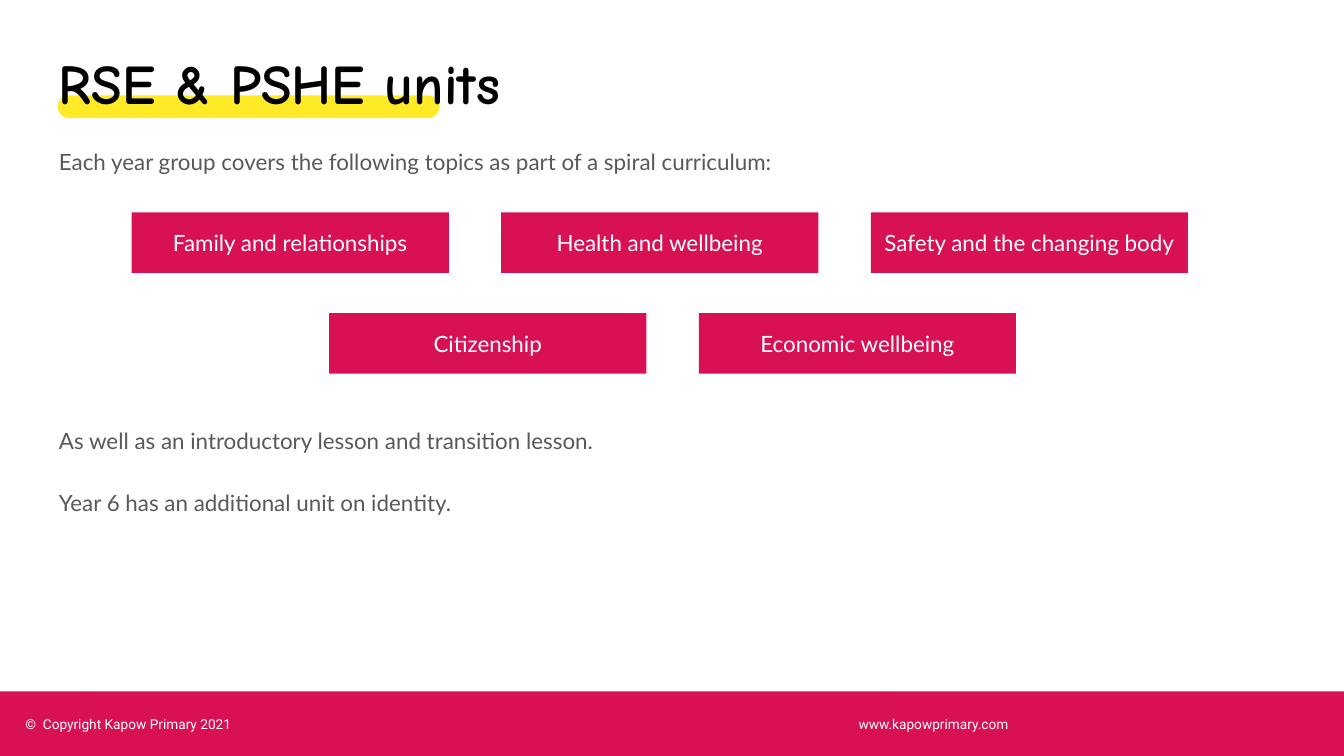
from lxml.etree import SubElement
from pptx import Presentation
from pptx.dml.color import RGBColor
from pptx.enum.shapes import MSO_SHAPE
from pptx.enum.text import MSO_ANCHOR, PP_ALIGN
from pptx.oxml.ns import qn
from pptx.util import Inches, Pt

PINK = RGBColor(0xD8, 0x11, 0x55)
YELLOW = RGBColor(0xFF, 0xEA, 0x28)
WHITE = RGBColor(0xFF, 0xFF, 0xFF)
BLACK = RGBColor(0x00, 0x00, 0x00)
GREY = RGBColor(0x59, 0x59, 0x59)

WIDTH = 10
HEIGHT = WIDTH * 9 / 16
FOOTER_HEIGHT = 0.48
TOPIC_ROWS = [
    (0.98, ["Family and relationships", "Health and wellbeing", "Safety and the changing body"]),
    (2.45, ["Citizenship", "Economic wellbeing"]),
]


def add_block(s, kind, x, y, w, h, color):
    sp = s.shapes.add_shape(kind, Inches(x), Inches(y), Inches(w), Inches(h))
    sp.shadow.inherit = False
    sp.fill.solid()
    sp.fill.fore_color.rgb = color
    sp.line.fill.background()
    return sp


def set_frame(sp, anchor=MSO_ANCHOR.TOP):
    tf = sp.text_frame
    tf.word_wrap = True
    tf.vertical_anchor = anchor
    tf.margin_left = tf.margin_right = tf.margin_top = tf.margin_bottom = Inches(0.1)
    return tf


def add_frame(s, x, y, w, h, anchor=MSO_ANCHOR.TOP):
    return set_frame(s.shapes.add_textbox(Inches(x), Inches(y), Inches(w), Inches(h)), anchor)


def add_run(p, text, font, size, color, bold=False):
    r = p.add_run()
    r.text = text
    r.font.name = font
    r.font.size = Pt(size)
    r.font.bold = bold
    r.font.color.rgb = color


def add_footer(s, x, y, w, h):
    add_block(s, MSO_SHAPE.RECTANGLE, x, y, w, h, PINK)
    tf = add_frame(s, x + 0.09, y + 0.05, 8.69, 0.38, MSO_ANCHOR.MIDDLE)
    p = tf.paragraphs[0]
    tabs = SubElement(p._p.get_or_add_pPr(), qn("a:tabLst"))
    SubElement(tabs, qn("a:tab"), pos=str(Inches(6.2)), algn="l")
    add_run(p, "©  Copyright Kapow Primary 2021\twww.kapowprimary.com", "Roboto", 7.3, WHITE)


def add_topics(s, y, w=2.36, h=0.45, step_x=2.75, step_y=0.75):
    for row, (x, topics) in enumerate(TOPIC_ROWS):
        for col, topic in enumerate(topics):
            sp = add_block(s, MSO_SHAPE.RECTANGLE, x + col * step_x, y + row * step_y, w, h, PINK)
            p = set_frame(sp, MSO_ANCHOR.MIDDLE).paragraphs[0]
            p.alignment = PP_ALIGN.CENTER
            add_run(p, topic, "Lato", 12, WHITE)


def add_title(s, x, y, w, h, text):
    marker = add_block(s, MSO_SHAPE.ROUNDED_RECTANGLE, x + 0.09, y + 0.45, 2.84, 0.17, YELLOW)
    marker.adjustments[0] = 0.5
    tf = add_frame(s, x, y, w, h)
    add_run(tf.paragraphs[0], text, "Comic Neue", 30, BLACK, bold=True)


def add_body(s, x, y, w, h, lines):
    tf = add_frame(s, x, y, w, h)
    for i, line in enumerate(lines):
        p = tf.add_paragraph() if i else tf.paragraphs[0]
        p.line_spacing = 1.15
        if i:
            p.space_before = Pt(16.6)
        add_run(p, line, "Lato", 12, GREY)


def main():
    prs = Presentation()
    prs.slide_width, prs.slide_height = Inches(WIDTH), Inches(HEIGHT)
    s = prs.slides.add_slide(prs.slide_layouts[6])
    add_footer(s, 0, HEIGHT - FOOTER_HEIGHT, WIDTH, FOOTER_HEIGHT)
    add_topics(s, 1.58)
    add_title(s, 0.34, 0.26, 9.32, 0.63, "RSE & PSHE units")
    add_body(s, 0.34, 0.97, 9.25, 0.45,
             ["Each year group covers the following topics as part of a spiral curriculum:"])
    add_body(s, 0.34, 3.05, 9.25, 0.45,
             ["As well as an introductory lesson and transition lesson.",
              "Year 6 has an additional unit on identity."])
    prs.save("out.pptx")


if __name__ == "__main__":
    main()
